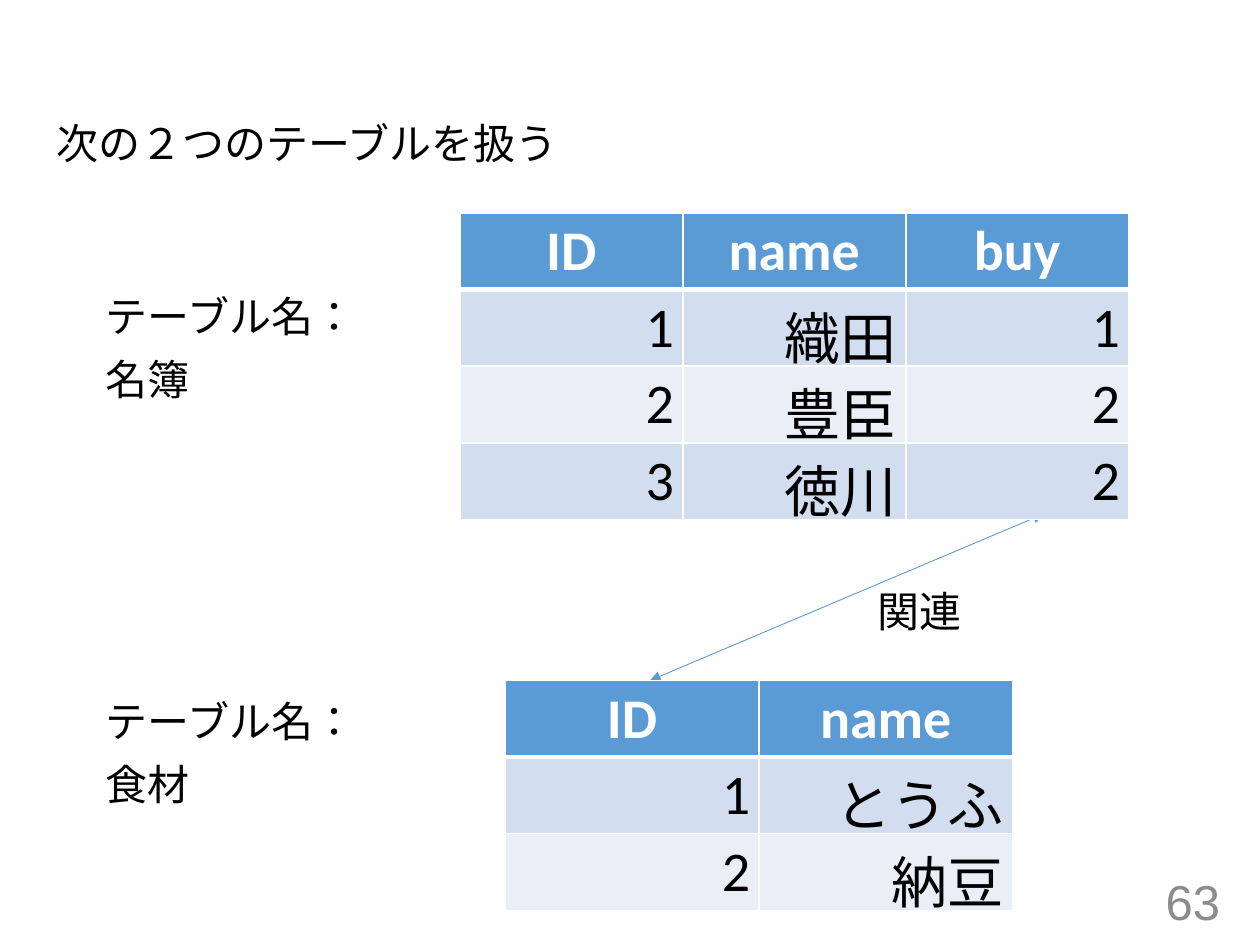
from dataclasses import dataclass

from lxml.etree import SubElement
from pptx import Presentation
from pptx.dml.color import RGBColor
from pptx.enum.lang import MSO_LANGUAGE_ID
from pptx.enum.shapes import MSO_CONNECTOR
from pptx.enum.text import MSO_ANCHOR, MSO_AUTO_SIZE, PP_ALIGN
from pptx.oxml.ns import qn
from pptx.util import Pt


@dataclass(frozen=True)
class Theme:
    ink: str = "000000"
    paper: str = "FFFFFF"
    muted: str = "8C8C8C"
    accent: str = "5B9BD5"
    bands: tuple = ("D2DEEF", "EAEFF7")
    prose_font: str = "Arial"
    data_font: str = "Calibri"
    prose_size: int = 24
    number_size: int = 28
    data_size: int = 32


def apply_format(target, values):
    for name, value in values.items():
        setattr(target, name, value)


class SlideBuilder:
    def __init__(self, slide, theme):
        self.slide = slide
        self.theme = theme

    def add_words(self, paragraph, wording, font, size, color, bold=False):
        run = paragraph.add_run()
        run.text = wording
        apply_format(run.font, {
            "name": font, "size": Pt(size), "bold": bold,
            "language_id": MSO_LANGUAGE_ID.JAPANESE,
        })
        run.font.color.rgb = RGBColor.from_string(color)

    def text(self, box, lines, font=None, size=None, color=None,
             frame_format=None, paragraph_format=None):
        theme = self.theme
        frame = self.slide.shapes.add_textbox(*map(Pt, box)).text_frame
        apply_format(frame, {"word_wrap": True, **(frame_format or {})})
        for index, line in enumerate(lines):
            paragraph = frame.add_paragraph() if index else frame.paragraphs[0]
            apply_format(paragraph, paragraph_format or {})
            self.add_words(paragraph, line, font or theme.prose_font,
                           size or theme.prose_size, color or theme.ink)

    def prose(self, box, *lines):
        self.text(box, lines, paragraph_format={
            "space_before": Pt(10), "line_spacing": 0.9})

    def double_arrow(self, start, end):
        arrow = self.slide.shapes.add_connector(
            MSO_CONNECTOR.STRAIGHT, *map(Pt, (*start, *end)))
        arrow.line.width = Pt(0.5)
        arrow.line.color.rgb = RGBColor.from_string(self.theme.accent)
        outline = arrow._element.spPr.find(qn("a:ln"))
        for tag in ("a:headEnd", "a:tailEnd"):
            SubElement(outline, qn(tag), type="triangle")
        SubElement(arrow._element.spPr, qn("a:effectLst"))

    def border(self, cell, bottom_width):
        """Draw the four cell edges; they must precede the fill in the XML."""
        properties = cell._tc.get_or_add_tcPr()
        widths = {"a:lnL": 1, "a:lnR": 1, "a:lnT": 1, "a:lnB": bottom_width}
        for tag, width in widths.items():
            edge = SubElement(properties, qn(tag), w=str(Pt(width)))
            fill = SubElement(edge, qn("a:solidFill"))
            SubElement(fill, qn("a:srgbClr"), val=self.theme.paper)

    def table(self, left, top, column_width, row_height, records):
        theme = self.theme
        row_count, column_count = len(records), len(records[0])
        table = self.slide.shapes.add_table(
            row_count, column_count, Pt(left), Pt(top),
            Pt(column_width * column_count), Pt(row_height * row_count)).table
        for column in table.columns:
            column.width = Pt(column_width)
        for row_index, record in enumerate(records):
            table.rows[row_index].height = Pt(row_height)
            header = row_index == 0
            fill = theme.accent if header else theme.bands[(row_index - 1) % 2]
            for column_index, value in enumerate(record):
                cell = table.cell(row_index, column_index)
                apply_format(cell, {
                    "margin_left": Pt(5), "margin_right": Pt(5),
                    "margin_top": Pt(2.5), "margin_bottom": Pt(2.5),
                })
                self.border(cell, 3 if header else 1)
                cell.fill.solid()
                cell.fill.fore_color.rgb = RGBColor.from_string(fill)
                paragraph = cell.text_frame.paragraphs[0]
                paragraph.alignment = PP_ALIGN.CENTER if header else PP_ALIGN.RIGHT
                self.add_words(paragraph, value, theme.data_font, theme.data_size,
                               theme.paper if header else theme.ink, header)


def main():
    theme = Theme()
    presentation = Presentation()
    apply_format(presentation, {"slide_width": Pt(720), "slide_height": Pt(540)})
    slide = presentation.slides.add_slide(presentation.slide_layouts[6])
    builder = SlideBuilder(slide, theme)

    builder.prose((25.2, 67, 373.7, 36.7), "次の２つのテーブルを扱う")
    builder.text((542.2, 500.4, 162, 28.8), ["63"],
                 size=theme.number_size, color=theme.muted,
                 frame_format={"vertical_anchor": MSO_ANCHOR.MIDDLE},
                 paragraph_format={"alignment": PP_ALIGN.RIGHT})
    builder.double_arrow((596.2, 293.8), (371.5, 388.8))
    builder.text((494.6, 331.2, 63.4, 36), ["関連"], font=theme.data_font,
                 frame_format={"word_wrap": False,
                               "auto_size": MSO_AUTO_SIZE.SHAPE_TO_FIT_TEXT})

    for caption_top, table_name in ((165.6, "名簿"), (397.4, "食材")):
        builder.prose((53.3, caption_top, 373.7, 101.5), "テーブル名：", table_name)

    row_height = 43.8
    builder.table(262.8, 121.7, 127.4, row_height, [
        ("ID", "name", "buy"),
        ("1", "織田", "1"),
        ("2", "豊臣", "2"),
        ("3", "徳川", "2"),
    ])
    builder.table(288.7, 388.8, 145, row_height, [
        ("ID", "name"),
        ("1", "とうふ"),
        ("2", "納豆"),
    ])
    presentation.save("out.pptx")


if __name__ == "__main__":
    main()
